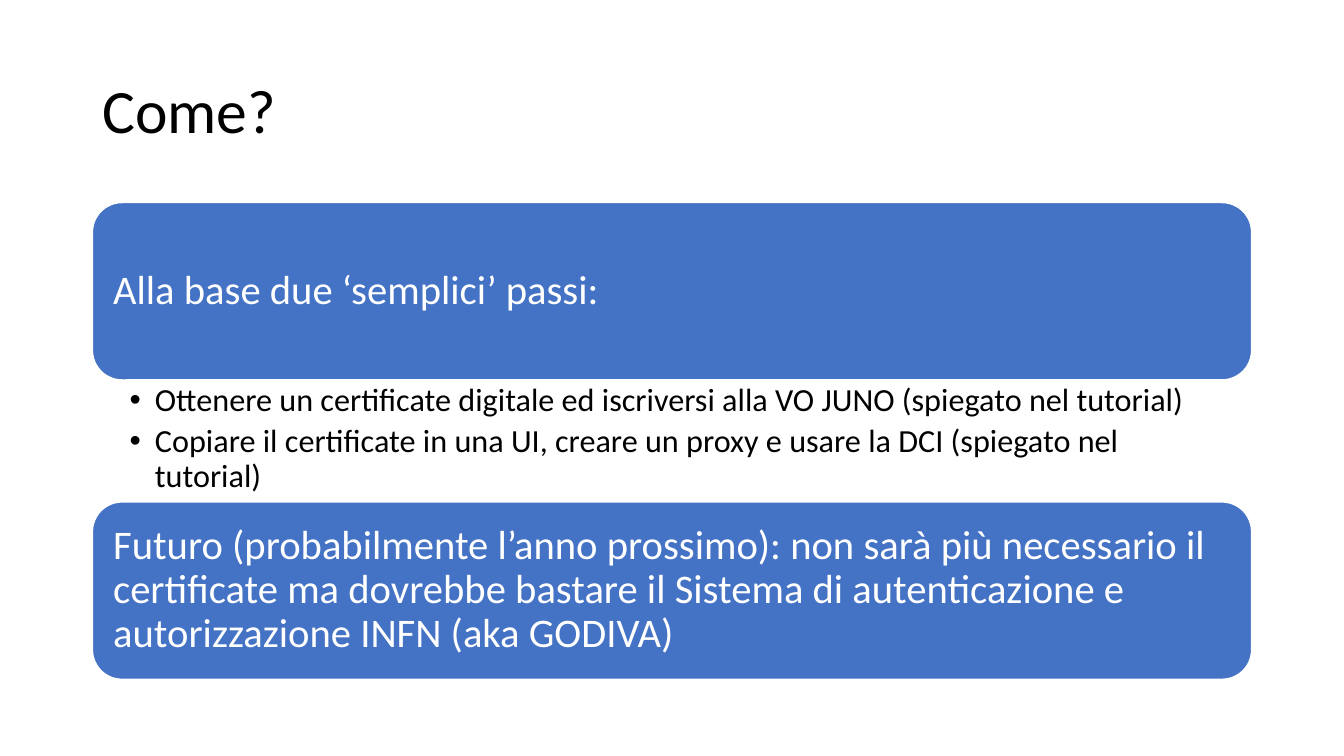
"""Build the "Come?" slide: two bands with a list of steps between them."""
from dataclasses import dataclass

from lxml import etree
from pptx import Presentation
from pptx import util as u
from pptx.dml.color import RGBColor
from pptx.enum import shapes, text
from pptx.oxml.ns import qn

WIDTH, HEIGHT = u.Inches(13.33), u.Inches(7.5)
COLUMN, ROW = WIDTH / 160, HEIGHT / 750
LEFT, SPAN = 11, 138
STACK_TOP = 201
FONT = "Calibri"
BLACK, WHITE, BLUE = "000000", "FFFFFF", "4472C4"


@dataclass(frozen=True)
class Block:
    """One full-width block of the stack, as a filled band or a bulleted list."""
    rows: int
    lines: tuple[str, ...]
    bulleted: bool = False


BLOCKS = (
    Block(176, ("Alla base due ‘semplici’ passi:",)),
    Block(121, (
        "Ottenere un certificate digitale ed iscriversi alla VO JUNO (spiegato nel tutorial)",
        "Copiare il certificate in una UI, creare un proxy e usare la DCI (spiegato nel tutorial)",
    ), bulleted=True),
    Block(176, (
        "Futuro (probabilmente l’anno prossimo): non sarà più necessario il certificate "
        "ma dovrebbe bastare il Sistema di autenticazione e autorizzazione INFN (aka GODIVA)",
    )),
)


def colour(value: str) -> RGBColor:
    """Turn a hex string into a colour."""
    return RGBColor.from_string(value)


def grid_box(top: int, rows: int) -> tuple[int, int, int, int]:
    """Give left, top, width and height of a full-width block."""
    return round(LEFT * COLUMN), round(top * ROW), round(SPAN * COLUMN), round(rows * ROW)


def set_frame(frame, anchor, left: float, top: float, right: float) -> None:
    """Set wrapping, anchor and insets of a text frame."""
    frame.word_wrap = True
    frame.auto_size = text.MSO_AUTO_SIZE.NONE
    frame.vertical_anchor = anchor
    frame.margin_left, frame.margin_right = u.Inches(left), u.Inches(right)
    frame.margin_top = frame.margin_bottom = u.Inches(top)


def add_bullet(paragraph) -> None:
    """Give a paragraph a hanging round bullet."""
    properties = paragraph._p.get_or_add_pPr()
    properties.set("marL", str(u.Inches(0.25)))
    properties.set("indent", str(-u.Inches(0.25)))
    etree.SubElement(properties, qn("a:buFont")).set("typeface", "Arial")
    etree.SubElement(properties, qn("a:buChar")).set("char", "•")


def write(paragraph, words: str, size: int, ink: str) -> None:
    """Write one left-aligned run into a paragraph."""
    paragraph.alignment = text.PP_ALIGN.LEFT
    paragraph.line_spacing = 0.9
    run = paragraph.add_run()
    run.text = words
    run.font.name, run.font.size = FONT, u.Pt(size)
    run.font.color.rgb = colour(ink)


def draw_band(slide, block: Block, top: int) -> None:
    """Draw a rounded blue band with its sentence."""
    band = slide.shapes.add_shape(
        shapes.MSO_SHAPE.ROUNDED_RECTANGLE, *grid_box(top, block.rows))
    band.shadow.inherit = False
    band.fill.solid()
    band.fill.fore_color.rgb = colour(BLUE)
    band.line.color.rgb = colour(WHITE)
    band.line.width = u.Pt(1)
    set_frame(band.text_frame, text.MSO_ANCHOR.MIDDLE, 0.12, 0.12, 0.12)
    write(band.text_frame.paragraphs[0], block.lines[0], 29, WHITE)


def draw_steps(slide, block: Block, top: int) -> None:
    """Draw the bulleted steps."""
    frame = slide.shapes.add_textbox(*grid_box(top, block.rows)).text_frame
    set_frame(frame, text.MSO_ANCHOR.TOP, 0.37, 0.04, 0.23)
    for number, line in enumerate(block.lines):
        step = frame.add_paragraph() if number else frame.paragraphs[0]
        add_bullet(step)
        step.space_after = u.Pt(4)
        write(step, line, 23, BLACK)


def main() -> None:
    """Build and save the slide."""
    deck = Presentation()
    deck.slide_width, deck.slide_height = WIDTH, HEIGHT
    slide = deck.slides.add_slide(deck.slide_layouts[5])
    heading = slide.shapes.title
    heading.left, heading.top, heading.width, heading.height = grid_box(40, 145)
    set_frame(heading.text_frame, text.MSO_ANCHOR.MIDDLE, 0.1, 0.05, 0.1)
    write(heading.text_frame.paragraphs[0], "Come?", 44, BLACK)
    top = STACK_TOP
    for block in BLOCKS:
        draw = draw_steps if block.bulleted else draw_band
        draw(slide, block, top)
        top += block.rows
    deck.save("out.pptx")


if __name__ == "__main__":
    main()
